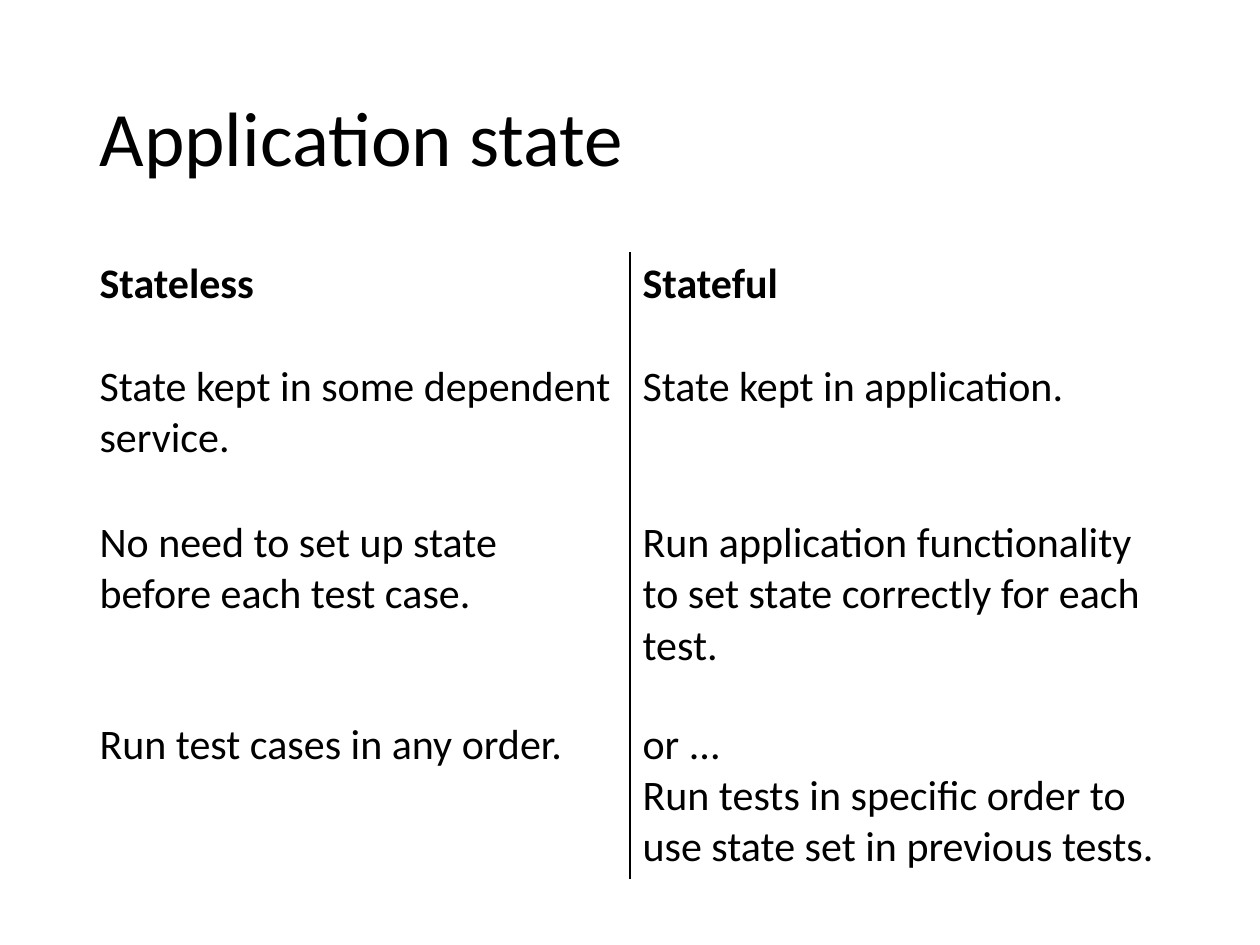
from lxml.etree import SubElement, Element
from pptx import Presentation
from pptx.dml.color import RGBColor
from pptx.enum.text import MSO_ANCHOR as Anchor, PP_ALIGN as Align
from pptx.oxml.ns import qn
from pptx.util import Inches, Pt

WIDTH, HEIGHT = 10, 7.5
LEFT, CONTENT = 0.69, 8.62
FONT, BLACK = "Calibri", "000000"
PLAIN_GRID = "{2D5ABB26-0587-4C30-8999-92F81FD0307C}"
ROW_HEIGHTS = [0.82, 1.24, 1.6, 1.29]
ROWS = [
    (["Stateless"], ["Stateful"]),
    (["State kept in some dependent service."], ["State kept in application."]),
    (["No need to set up state before each test case."],
     ["Run application functionality to set state correctly for each test."]),
    (["Run test cases in any order."],
     ["or ...", "Run tests in specific order to use state set in previous tests."]),
]


def color(value):
    return RGBColor.from_string(value)


def add_run(para, text, size, bold=False):
    para.alignment = Align.LEFT
    span = para.add_run()
    span.text = text
    span.font.name = FONT
    span.font.size = Pt(size)
    span.font.bold = bold
    span.font.color.rgb = color(BLACK)


def add_title(page, text):
    box = page.shapes.title
    box.left, box.top = Inches(LEFT), Inches(0.4)
    box.width, box.height = Inches(CONTENT), Inches(1.45)
    box.text_frame.vertical_anchor = Anchor.MIDDLE
    box.text_frame.word_wrap = True
    para = box.text_frame.paragraphs[0]
    para.line_spacing = 0.9
    add_run(para, text, 44)


def add_border(cell, side, value, points):
    line = Element(qn(f"a:{side}"), w=str(Pt(points)))
    fill = SubElement(line, qn("a:solidFill"))
    SubElement(fill, qn("a:srgbClr"), val=value)
    cell._tc.get_or_add_tcPr().insert(0, line)


def fill_cell(cell, lines, bold):
    cell.fill.background()
    cell.vertical_anchor = Anchor.TOP
    frame = cell.text_frame
    for index, text in enumerate(lines):
        para = frame.add_paragraph() if index else frame.paragraphs[0]
        add_run(para, text, 24, bold)


def add_comparison(page):
    frame = page.shapes.add_table(
        len(ROWS), 2, Inches(LEFT), Inches(2), Inches(CONTENT), Inches(sum(ROW_HEIGHTS)))
    table = frame.table
    table.first_row = table.horz_banding = False
    next(frame.element.iter(qn("a:tableStyleId"))).text = PLAIN_GRID
    for column in table.columns:
        column.width = Inches(CONTENT / 2)
    for index, (height, entries) in enumerate(zip(ROW_HEIGHTS, ROWS)):
        table.rows[index].height = Inches(height)
        for cell, lines, side in zip(table.rows[index].cells, entries, ("lnR", "lnL")):
            fill_cell(cell, lines, index == 0)
            add_border(cell, side, BLACK, 1)


def main():
    deck = Presentation()
    deck.slide_width, deck.slide_height = Inches(WIDTH), Inches(HEIGHT)
    page = deck.slides.add_slide(deck.slide_layouts[5])
    add_title(page, "Application state")
    add_comparison(page)
    deck.save("out.pptx")


if __name__ == "__main__":
    main()
